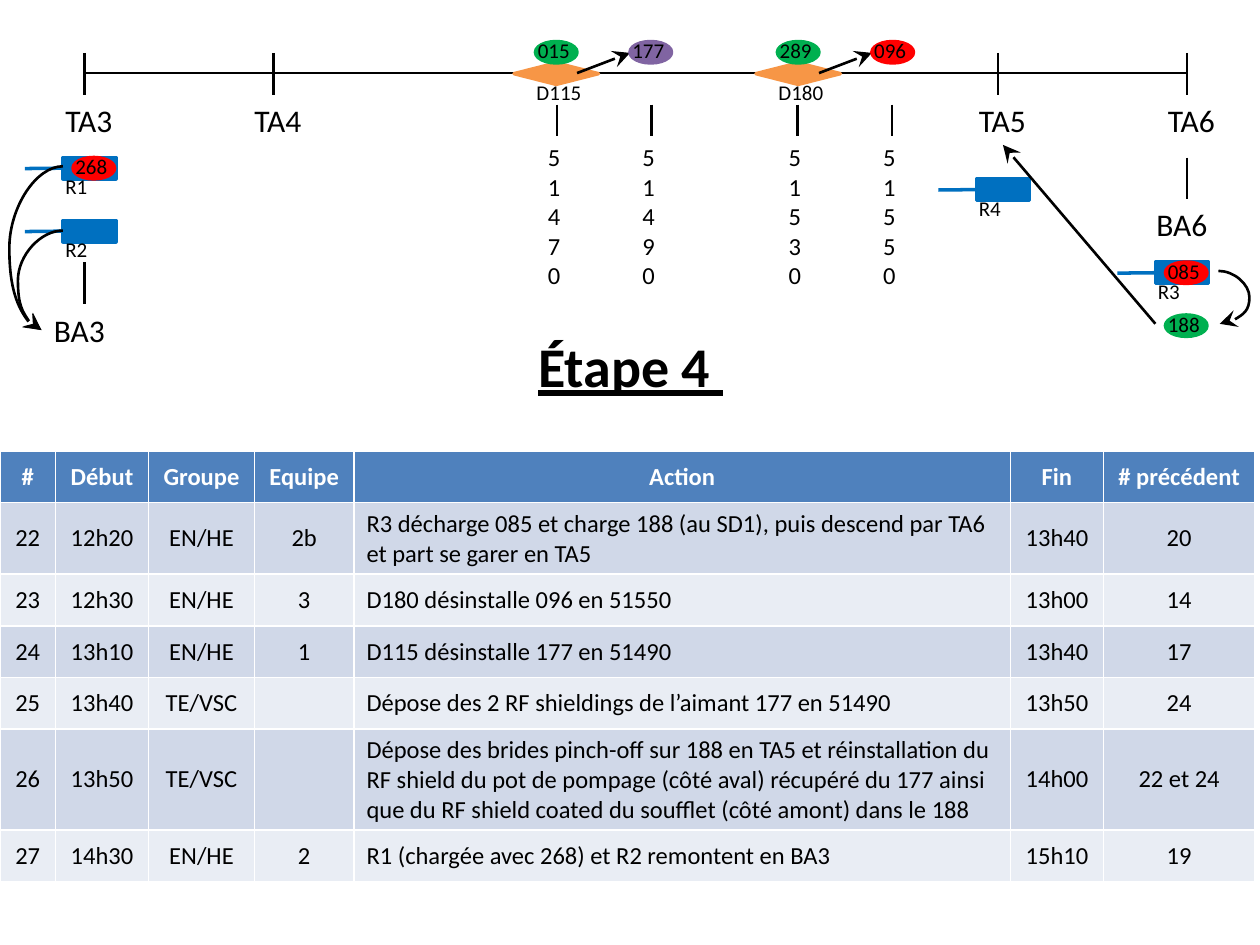
import pptx
import pptx.util
import pptx.dml.color
import pptx.enum.shapes
import pptx.enum.text
import pptx.oxml
import pptx.oxml.ns
from lxml import etree

Inches = pptx.util.Inches
Pt = pptx.util.Pt
RGBColor = pptx.dml.color.RGBColor
Shape = pptx.enum.shapes.MSO_SHAPE
Connector = pptx.enum.shapes.MSO_CONNECTOR
Align = pptx.enum.text.PP_ALIGN
Anchor = pptx.enum.text.MSO_ANCHOR
qn = pptx.oxml.ns.qn

BLACK = RGBColor(0, 0, 0)
WHITE = RGBColor(255, 255, 255)
ORANGE = RGBColor(0xF7, 0x96, 0x46)
BLUE = RGBColor(0, 0x70, 0xC0)
GREEN = RGBColor(0, 0xB0, 0x50)
RED = RGBColor(255, 0, 0)
PURPLE = RGBColor(0x80, 0x64, 0xA2)
HEADER = RGBColor(0x4F, 0x81, 0xBD)
BANDS = (RGBColor(0xD0, 0xD8, 0xE8), RGBColor(0xE9, 0xED, 0xF4))

TRACK_Y = 0.58
ACTION_COLUMN = 4
COLUMN_WIDTHS = (0.44, 0.74, 0.84, 0.79, 5.21, 0.74, 1.2)
ROW_HEIGHT = 0.41
SCHEDULE = (
    ("#", "Début", "Groupe", "Equipe", "Action", "Fin", "# précédent"),
    ("22", "12h20", "EN/HE", "2b",
     "R3 décharge 085 et charge 188 (au SD1), puis descend par TA6 et part se garer en TA5",
     "13h40", "20"),
    ("23", "12h30", "EN/HE", "3", "D180 désinstalle 096 en 51550", "13h00", "14"),
    ("24", "13h10", "EN/HE", "1", "D115 désinstalle 177 en 51490", "13h40", "17"),
    ("25", "13h40", "TE/VSC", "", "Dépose des 2 RF shieldings de l’aimant 177 en 51490",
     "13h50", "24"),
    ("26", "13h50", "TE/VSC", "",
     "Dépose des brides pinch-off sur 188 en TA5 et réinstallation du RF shield du pot de "
     "pompage (côté aval) récupéré du 177 ainsi que du RF shield coated du soufflet "
     "(côté amont) dans le 188",
     "14h00", "22 et 24"),
    ("27", "14h30", "EN/HE", "2", "R1 (chargée avec 268) et R2 remontent en BA3", "15h10", "19"),
)


class Board:
    font = "Calibri"
    line_width = Pt(1.5)
    outline_width = Pt(2)

    def __init__(self, page):
        self.page = page

    def style(self, para, size, color=BLACK, bold=False):
        para.font.name = self.font
        para.font.size = Pt(size)
        para.font.color.rgb = color
        para.font.bold = bold

    def title(self, text, left, top, width, height):
        box = self.page.shapes.title
        box.left, box.top = Inches(left), Inches(top)
        box.width, box.height = Inches(width), Inches(height)
        box.text_frame.text = text
        box.text_frame.vertical_anchor = Anchor.TOP
        para = box.text_frame.paragraphs[0]
        para.alignment = Align.LEFT
        self.style(para, 32, bold=True)
        para.font.underline = True

    def label(self, text, left, top, width, height, size):
        box = self.page.shapes.add_textbox(
            Inches(left), Inches(top), Inches(width), Inches(height))
        box.text_frame.word_wrap = True
        box.text_frame.text = text
        self.style(box.text_frame.paragraphs[0], size)

    def shape(self, kind, left, top, width, height, color):
        shape = self.page.shapes.add_shape(
            kind, Inches(left), Inches(top), Inches(width), Inches(height))
        shape.shadow.inherit = False
        shape.fill.solid()
        shape.fill.fore_color.rgb = color
        shape.line.color.rgb = color
        shape.line.width = self.outline_width
        return shape

    def line(self, start, end, arrow=False, kind=Connector.STRAIGHT):
        line = self.page.shapes.add_connector(kind, *map(Inches, start + end))
        line.line.color.rgb = BLACK
        line.line.width = self.line_width
        properties = line._element.spPr
        if arrow:
            etree.SubElement(properties.find(qn("a:ln")), qn("a:tailEnd"),
                             type="stealth", w="lg", len="lg")
        etree.SubElement(properties, qn("a:effectLst"))
        return line

    def curve(self, start, end, bend):
        line = self.line(start, end, True, Connector.CURVE)
        guides = line._element.spPr.find(qn("a:prstGeom")).get_or_add_avLst()
        etree.SubElement(guides, qn("a:gd"), name="adj1", fmla=f"val {round(bend * 100000)}")

    def tick(self, x, top, length):
        self.line((x, top), (x, top + length))

    def station(self, name, x):
        self.tick(x, 0.42, 0.33)
        self.label(name, x - 0.25, 0.75, 0.58, 0.4, 18)

    def position(self, number, x):
        self.tick(x, 0.83, 0.25)
        self.label(number, x - 0.17, 1.08, 0.25, 1.28, 14)

    def trailer(self, name, left, top):
        callout = self.shape(Shape.LINE_CALLOUT_1, left, top, 0.42, 0.17, BLUE)
        for index, value in enumerate((0.5, -0.01, 0.52, -0.72)):
            callout.adjustments[index] = value
        self.label(name, left - 0.08, top + 0.08, 0.42, 0.3, 12)

    def magnet(self, number, left, top, color):
        self.shape(Shape.OVAL, left, top, 0.33, 0.17, color)
        self.label(number, left - 0.08, top - 0.08, 0.5, 0.3, 12)

    def unloader(self, name, left):
        self.shape(Shape.FLOWCHART_DECISION, left, 0.5, 0.67, 0.17, ORANGE)
        self.label(name, left + 0.08, TRACK_Y, 0.6, 0.3, 12)
        self.line((left + 0.5, TRACK_Y), (left + 0.92, 0.42), arrow=True)

    def table(self, rows, left, top):
        frame = self.page.shapes.add_table(
            len(rows), len(COLUMN_WIDTHS), Inches(left), Inches(top),
            Inches(sum(COLUMN_WIDTHS)), Inches(ROW_HEIGHT * len(rows)))
        for column, width in zip(frame.table.columns, COLUMN_WIDTHS):
            column.width = Inches(width)
        for r, values in enumerate(rows):
            head = r == 0
            for c, value in enumerate(values):
                cell = frame.table.cell(r, c)
                cell.text = value
                cell.vertical_anchor = Anchor.MIDDLE
                cell.fill.solid()
                cell.fill.fore_color.rgb = HEADER if head else BANDS[(r - 1) % 2]
                para = cell.text_frame.paragraphs[0]
                para.alignment = Align.CENTER if head or c != ACTION_COLUMN else Align.LEFT
                self.style(para, 14, WHITE if head else BLACK, head)


def main():
    deck = pptx.Presentation()
    deck.slide_width, deck.slide_height = Inches(10), Inches(7.5)
    board = Board(deck.slides.add_slide(deck.slide_layouts[5]))

    board.title("Étape 4 ", 4.17, 2.58, 2.25, 0.64)
    board.line((0.67, TRACK_Y), (9.42, TRACK_Y))
    for name, x in (("TA3", 0.67), ("TA4", 2.17), ("TA5", 7.92), ("TA6", 9.42)):
        board.station(name, x)
    for name, x, tick_top, top in (("BA3", 0.67, 2.08, 2.42), ("BA6", 9.42, 1.25, 1.58)):
        board.tick(x, tick_top, 0.33)
        board.label(name, x - 0.34, top, 0.67, 0.4, 18)
    for name, left in (("D115", 4.08), ("D180", 6)):
        board.unloader(name, left)
    for number, x in (("51470", 4.42), ("51490", 5.17), ("51530", 6.33), ("51550", 7.08)):
        board.position(number, x)
    for name, left, top in (("R1", 0.5, 1.25), ("R2", 0.5, 1.75),
                            ("R3", 9.17, 2.08), ("R4", 7.75, 1.42)):
        board.trailer(name, left, top)
    board.line((9.17, 2.57), (7.96, 1.15), arrow=True)
    for number, left, top, color in (
            ("015", 4.25, 0.33, GREEN), ("177", 5, 0.33, PURPLE),
            ("289", 6.17, 0.33, GREEN), ("096", 6.92, 0.33, RED),
            ("268", 0.58, 1.25, RED), ("085", 9.25, 2.08, RED),
            ("188", 9.25, 2.5, GREEN)):
        board.magnet(number, left, top, color)
    board.table(SCHEDULE, 0, 3.58)
    board.curve((0.5, 1.32), (0.33, 2.62), 2.5)
    board.curve((0.5, 1.83), (0.33, 2.62), 2.1)
    board.curve((9.67, 2.15), (9.68, 2.57), 25)
    deck.save("out.pptx")


if __name__ == "__main__":
    main()
